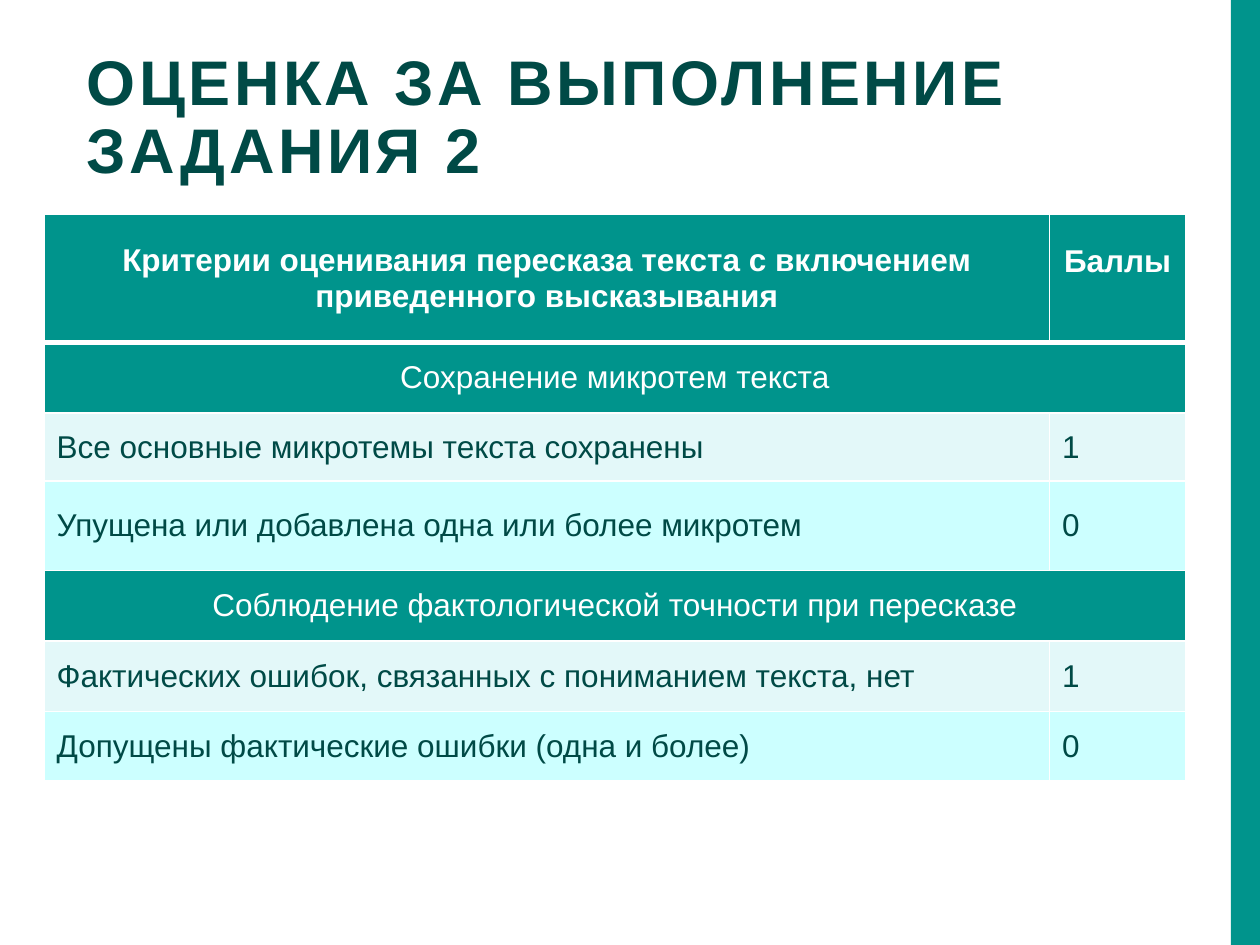
from lxml.etree import SubElement
from pptx import Presentation
from pptx.dml.color import RGBColor
from pptx.enum.shapes import MSO_SHAPE
from pptx.enum.text import MSO_ANCHOR, PP_ALIGN
from pptx.oxml.ns import qn
from pptx.util import Inches, Pt

TEAL, DARK, WHITE = "00948C", "004A46", "FFFFFF"
PALE, AQUA = "E3F8F9", "CCFFFF"

COLUMN_WIDTHS = [7.98, 1.08]
ROW_HEIGHTS = [1.02, 0.56, 0.54, 0.71, 0.56, 0.56, 0.55]
HEADING = ["Критерии оценивания пересказа текста с включением приведенного высказывания", "Баллы"]
CRITERIA = [
    ("Сохранение микротем текста", [
        ("Все основные микротемы текста сохранены", "1"),
        ("Упущена или добавлена одна или более микротем", "0"),
    ]),
    ("Соблюдение фактологической точности при пересказе", [
        ("Фактических ошибок, связанных с пониманием текста, нет", "1"),
        ("Допущены фактические ошибки (одна и более)", "0"),
    ]),
]

TITLE_FONT = {"name": "Arial", "size": Pt(36), "bold": True}
HEADING_FONT = {"name": "Arial", "size": Pt(18), "bold": True}
BODY_FONT = HEADING_FONT | {"bold": False}


def color(value):
    return RGBColor.from_string(value)


def write(frame, text, font_format, ink, align=PP_ALIGN.LEFT):
    paragraph = frame.paragraphs[0]
    paragraph.alignment = align
    run = paragraph.add_run()
    run.text = text
    for attribute, value in font_format.items():
        setattr(run.font, attribute, value)
    run.font.color.rgb = color(ink)
    return paragraph


def add_side_bar(slide, slide_width, slide_height):
    width = Inches(0.23)
    bar = slide.shapes.add_shape(
        MSO_SHAPE.RECTANGLE, slide_width - width, 0, width, slide_height)
    bar.shadow.inherit = False
    bar.fill.solid()
    bar.fill.fore_color.rgb = color(TEAL)
    bar.line.fill.background()


def add_title(slide, text):
    title = slide.shapes.add_textbox(Inches(0.59), Inches(0.36), Inches(9), Inches(0.63))
    title.text_frame.word_wrap = True
    paragraph = write(title.text_frame, text, TITLE_FONT, DARK)
    paragraph.line_spacing = 0.9
    paragraph.runs[0].font._element.set("spc", "200")


def set_borders(cell, widths):
    """Draw white cell borders; widths maps L, R, T, B to points."""
    properties = cell._tc.get_or_add_tcPr()
    for position, (side, width) in enumerate(widths.items()):
        line = SubElement(properties, qn(f"a:ln{side}"), w=str(Pt(width)))
        fill = SubElement(line, qn("a:solidFill"))
        SubElement(fill, qn("a:srgbClr"), val=WHITE)
        properties.insert(position, line)


def fill_cell(cell, text, fill, font_format, ink, align=PP_ALIGN.LEFT):
    cell.fill.solid()
    cell.fill.fore_color.rgb = color(fill)
    cell.vertical_anchor = MSO_ANCHOR.MIDDLE
    write(cell.text_frame, text, font_format, ink, align)


def add_criteria_table(slide):
    table = slide.shapes.add_table(
        len(ROW_HEIGHTS), len(COLUMN_WIDTHS), Inches(0.35), Inches(1.7),
        Inches(sum(COLUMN_WIDTHS)), Inches(sum(ROW_HEIGHTS))).table
    for column, width in zip(table.columns, COLUMN_WIDTHS):
        column.width = Inches(width)
    for row, height in zip(table.rows, ROW_HEIGHTS):
        row.height = Inches(height)

    for column, text in enumerate(HEADING):
        fill_cell(table.cell(0, column), text, TEAL, HEADING_FONT, WHITE, PP_ALIGN.CENTER)
    # Lifts the short label level with the first line of its neighbour
    table.cell(0, 1).margin_bottom = Inches(0.32)

    row = 1
    for section, grades in CRITERIA:
        table.cell(row, 0).merge(table.cell(row, 1))
        fill_cell(table.cell(row, 0), section, TEAL, BODY_FONT, WHITE, PP_ALIGN.CENTER)
        for offset, (grade, fill) in enumerate(zip(grades, (PALE, AQUA)), start=1):
            for column, text in enumerate(grade):
                fill_cell(table.cell(row + offset, column), text, fill, BODY_FONT, DARK)
        row += 1 + len(grades)

    for index in range(len(ROW_HEIGHTS)):
        for column in range(len(COLUMN_WIDTHS)):
            set_borders(table.cell(index, column), {
                "L": 1, "R": 1,
                "T": 3 if index == 1 else 1,
                "B": 3 if index == 0 else 1,
            })


def main():
    presentation = Presentation()
    presentation.slide_width, presentation.slide_height = Inches(10), Inches(7.5)
    slide = presentation.slides.add_slide(presentation.slide_layouts[6])
    add_side_bar(slide, presentation.slide_width, presentation.slide_height)
    add_title(slide, "ОЦЕНКА ЗА ВЫПОЛНЕНИЕ ЗАДАНИЯ 2")
    add_criteria_table(slide)
    presentation.save("out.pptx")


if __name__ == "__main__":
    main()
